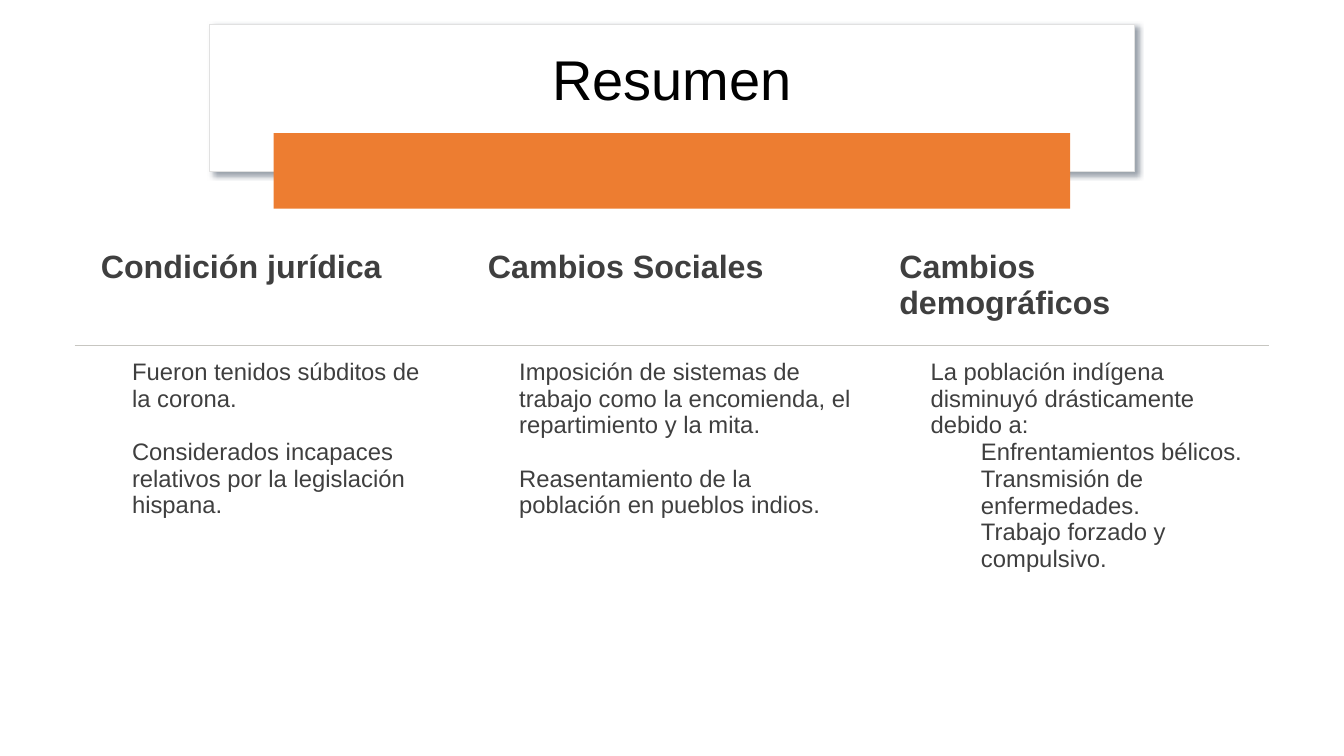
from dataclasses import dataclass
from typing import NamedTuple

from lxml.etree import SubElement
from pptx import Presentation
from pptx.dml.color import RGBColor
from pptx.enum.shapes import MSO_SHAPE
from pptx.enum.text import MSO_ANCHOR, PP_ALIGN
from pptx.oxml import parse_xml
from pptx.oxml.ns import nsdecls, qn
from pptx.util import Inches, Pt

SLIDE_WIDTH, SLIDE_HEIGHT = Inches(13.33), Inches(7.5)
WHITE = RGBColor(0xFF, 0xFF, 0xFF)
BLACK = RGBColor(0x00, 0x00, 0x00)
CHARCOAL = RGBColor(0x3F, 0x3F, 0x3F)
ORANGE = RGBColor(0xED, 0x7D, 0x31)
CARD_EDGE = RGBColor(0xE1, 0xE1, 0xE1)
CARD_SHADOW = RGBColor(0x39, 0x47, 0x5A)
RULE_GREY = RGBColor(0xC7, 0xC6, 0xC1)
FONT = "Arial"
PLAIN_TABLE = "{2D5ABB26-0587-4C30-8999-92F81FD0307C}"
HEADING_ROW, POINTS_ROW = 14.53, 45.2
LEVEL_INDENTS = (0.31, 0.81)


class Band(NamedTuple):
    """Horizontally centred area, in percent of the slide."""
    top: float
    width: float
    height: float


class Point(NamedTuple):
    """One statement, its level and the space below it in points."""
    text: str
    level: int = 0
    gap: float = 0


@dataclass
class Topic:
    """One column of the summary, its width in percent of the slide."""
    heading: str
    width: float
    points: list[Point]


CARD = Band(3.2, 68.79, 19.47)
TITLE = Band(4.53, 65.49, 12.67)
ACCENT = Band(17.6, 59.26, 10)
TOPICS = [
    Topic("Condición jurídica", 28.81, [
        Point("Fueron tenidos súbditos de la corona.", gap=19),
        Point("Considerados incapaces relativos por la legislación hispana."),
    ]),
    Topic("Cambios Sociales", 30.61, [
        Point("Imposición de sistemas de trabajo como la encomienda, "
              "el repartimiento y la mita.", gap=19),
        Point("Reasentamiento de la población en pueblos indios."),
    ]),
    Topic("Cambios demográficos", 29.48, [
        Point("La población indígena disminuyó drásticamente debido a:"),
        Point("Enfrentamientos bélicos.", 1),
        Point("Transmisión de enfermedades.", 1),
        Point("Trabajo forzado y compulsivo.", 1),
    ]),
]
SUMMARY = Band(31.2, sum(topic.width for topic in TOPICS), HEADING_ROW + POINTS_ROW)


def across(percent: float) -> int:
    """Turn a share of the slide's width into a length."""
    return round(SLIDE_WIDTH * percent / 100)


def down(percent: float) -> int:
    """Turn a share of the slide's height into a length."""
    return round(SLIDE_HEIGHT * percent / 100)


def frame(band: Band) -> tuple[int, int, int, int]:
    """Return left, top, width and height of a centred band."""
    return across((100 - band.width) / 2), down(band.top), across(band.width), down(band.height)


def write(paragraph, text: str, *, size: float, color: RGBColor = CHARCOAL, bold: bool = False,
          align=PP_ALIGN.LEFT, spacing: float = 1, gap: float = 0, indent: float = 0) -> None:
    """Put formatted text into a paragraph."""
    paragraph.alignment, paragraph.line_spacing = align, spacing
    paragraph.space_before, paragraph.space_after = Pt(0), Pt(gap)
    properties = paragraph._p.get_or_add_pPr()
    properties.set("marL", str(Inches(indent)))
    properties.set("indent", "0")
    run = paragraph.add_run()
    run.text = text
    run.font.name, run.font.size, run.font.bold = FONT, Pt(size), bold
    run.font.color.rgb = color


def add_panel(slide, band: Band, fill: RGBColor, edge: RGBColor | None = None):
    """Draw a filled rectangle without shadow."""
    panel = slide.shapes.add_shape(MSO_SHAPE.RECTANGLE, *frame(band))
    panel.shadow.inherit = False
    panel.fill.solid()
    panel.fill.fore_color.rgb = fill
    if edge is None:
        panel.line.fill.background()
    else:
        panel.line.color.rgb = edge
        panel.line.width = Pt(1)
    return panel


def cast_shadow(panel) -> None:
    """Give a panel a soft shadow to the lower right."""
    effects = panel._element.spPr.find(qn("a:effectLst"))
    effects.append(parse_xml(
        f'<a:outerShdw {nsdecls("a")} blurRad="{Pt(4)}" dist="{Pt(3)}" dir="2700000" '
        f'algn="tl" rotWithShape="0"><a:srgbClr val="{CARD_SHADOW}">'
        '<a:alpha val="50000"/></a:srgbClr></a:outerShdw>'))


def prepare_cell(cell, ruled_side: str) -> None:
    """Clear a cell's fill, set its margins and rule one side."""
    cell.fill.background()
    cell.vertical_anchor = MSO_ANCHOR.TOP
    cell.margin_left, cell.margin_right = Inches(0.26), Inches(0.19)
    cell.margin_top = cell.margin_bottom = Inches(0.13)
    cell._tc.get_or_add_tcPr().insert(0, parse_xml(
        f'<a:{ruled_side} {nsdecls("a")} w="{Pt(0.75)}"><a:solidFill>'
        f'<a:srgbClr val="{RULE_GREY}"/></a:solidFill></a:{ruled_side}>'))


def add_summary(slide) -> None:
    """Build the table of topics and their points."""
    summary = slide.shapes.add_table(2, len(TOPICS), *frame(SUMMARY)).table
    summary.first_row = summary.horz_banding = False
    properties = summary._tbl.tblPr
    for style in properties.findall(qn("a:tableStyleId")):
        properties.remove(style)
    SubElement(properties, qn("a:tableStyleId")).text = PLAIN_TABLE
    for row, height in zip(summary.rows, (HEADING_ROW, POINTS_ROW)):
        row.height = down(height)
    for column, topic in enumerate(TOPICS):
        summary.columns[column].width = across(topic.width)
        heading, body = summary.cell(0, column), summary.cell(1, column)
        prepare_cell(heading, "lnB")
        prepare_cell(body, "lnT")
        write(heading.text_frame.paragraphs[0], topic.heading, size=23, bold=True)
        for index, point in enumerate(topic.points):
            content = body.text_frame
            paragraph = content.add_paragraph() if index else content.paragraphs[0]
            paragraph.level = point.level
            write(paragraph, point.text, size=17, gap=point.gap,
                  indent=LEVEL_INDENTS[point.level])


def main() -> None:
    """Build and save the summary slide."""
    deck = Presentation()
    deck.slide_width, deck.slide_height = SLIDE_WIDTH, SLIDE_HEIGHT
    slide = deck.slides.add_slide(deck.slide_layouts[5])
    card = add_panel(slide, CARD, WHITE, CARD_EDGE)
    cast_shadow(card)
    title = slide.shapes.title
    title.left, title.top, title.width, title.height = frame(TITLE)
    title.text_frame.vertical_anchor = MSO_ANCHOR.MIDDLE
    write(title.text_frame.paragraphs[0], "Resumen", size=40, color=BLACK,
          align=PP_ALIGN.CENTER, spacing=0.9)
    card._element.addnext(title._element)
    add_panel(slide, ACCENT, ORANGE)
    add_summary(slide)
    deck.save("out.pptx")


if __name__ == "__main__":
    main()
